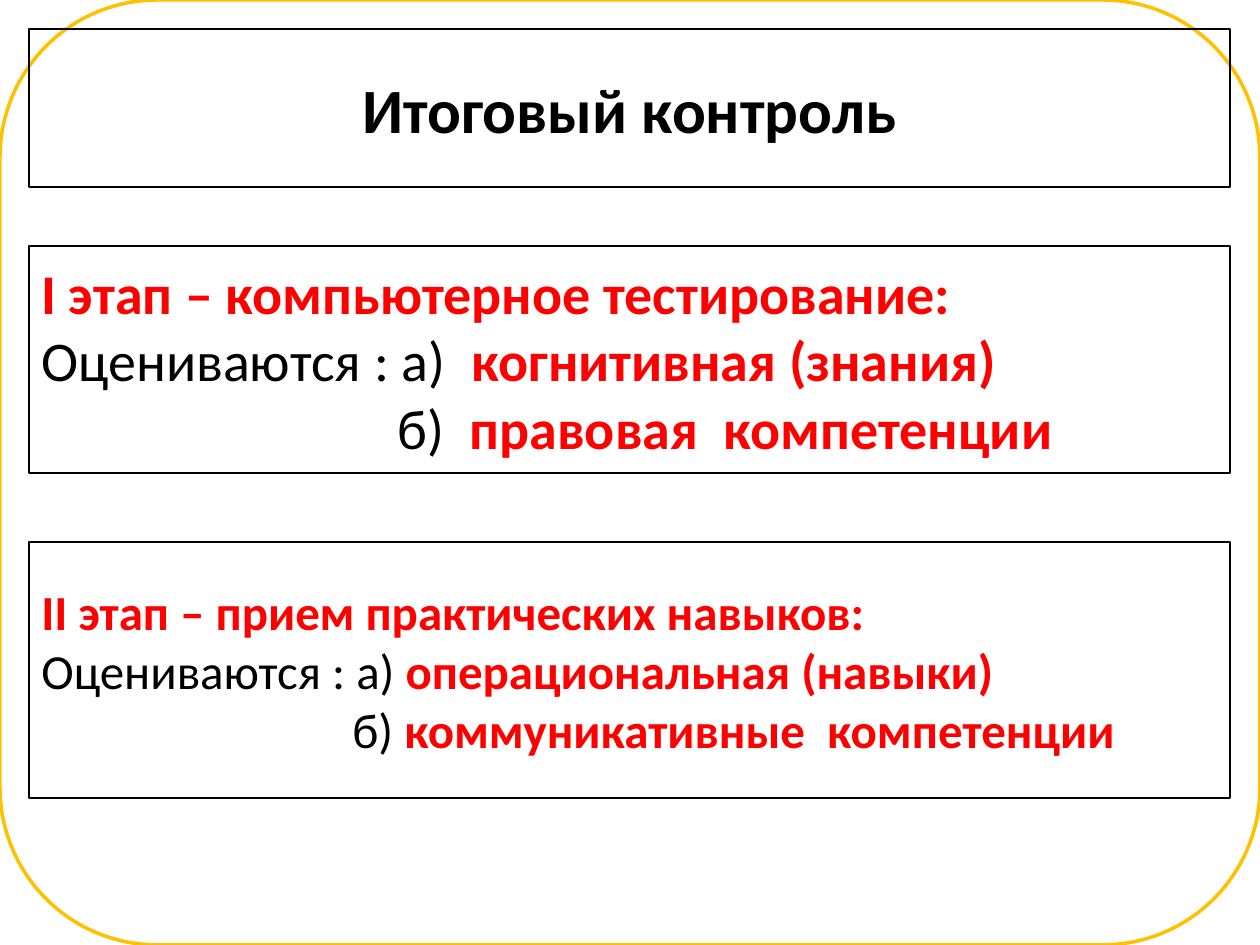
from pptx import Presentation
from pptx import util as u
from pptx.dml.color import RGBColor
from pptx.enum import shapes, text

BLACK = RGBColor(0x00, 0x00, 0x00)
RED = RGBColor(0xFF, 0x00, 0x00)
WHITE = RGBColor(0xFF, 0xFF, 0xFF)
AMBER = RGBColor(0xFF, 0xC0, 0x00)
FONT = "Calibri"
PX_PER_INCH = 126


def px(n):
    return u.Emu(round(n * 914400 / PX_PER_INCH))


def add_box(s, box, kind, fill, line, width):
    sp = s.shapes.add_shape(kind, *[px(n) for n in box])
    sp.shadow.inherit = False
    if fill is None:
        sp.fill.background()
    else:
        sp.fill.solid()
        sp.fill.fore_color.rgb = fill
    sp.line.color.rgb = line
    sp.line.width = u.Pt(width)
    return sp


def add_text_box(s, box):
    sp = add_box(s, box, shapes.MSO_SHAPE.RECTANGLE, None, BLACK, 0.75)
    tf = sp.text_frame
    tf.word_wrap = True
    tf.vertical_anchor = text.MSO_ANCHOR.MIDDLE
    return tf


def add_run(p, words, size, color, bold):
    r = p.add_run()
    r.text = words
    r.font.name = FONT
    r.font.size = u.Pt(size)
    r.font.color.rgb = color
    r.font.bold = bold


def add_title(s, box, words):
    p = add_text_box(s, box).paragraphs[0]
    p.alignment = text.PP_ALIGN.CENTER
    add_run(p, words, 36, BLACK, True)


def add_stage(s, box, size, align, indent, heading, items):
    """A red heading, then (label, competence) lines; lines after the first are indented."""
    tf = add_text_box(s, box)
    p = tf.paragraphs[0]
    p.alignment = align
    add_run(p, heading, size, RED, True)
    for i, (label, competence) in enumerate(items):
        p = tf.add_paragraph()
        p.alignment = align
        if i:
            p._p.get_or_add_pPr().set("marL", str(px(indent)))
        add_run(p, label, size, BLACK, False)
        add_run(p, competence, size, RED, True)


def main():
    prs = Presentation()
    prs.slide_width, prs.slide_height = px(1260), px(945)
    s = prs.slides.add_slide(prs.slide_layouts[6])

    # Rounded frame
    add_box(s, (0, 0, 1260, 945), shapes.MSO_SHAPE.ROUNDED_RECTANGLE, WHITE, AMBER, 2)

    # Title and the two stages share one column
    left, width = 29, 1201
    add_stage(s, (left, 246, width, 227), 32, text.PP_ALIGN.JUSTIFY, 356,
              "I этап – компьютерное тестирование:",
              [("Оцениваются : а)  ", "когнитивная (знания)"),
               ("б)  ", "правовая  компетенции")])
    add_title(s, (left, 29, width, 158), "Итоговый контроль")
    add_stage(s, (left, 542, width, 256), 28, text.PP_ALIGN.LEFT, 311,
              "II этап – прием практических навыков:",
              [("Оцениваются : а) ", "операциональная (навыки)"),
               ("б) ", "коммуникативные  компетенции")])

    prs.save("out.pptx")


if __name__ == "__main__":
    main()
